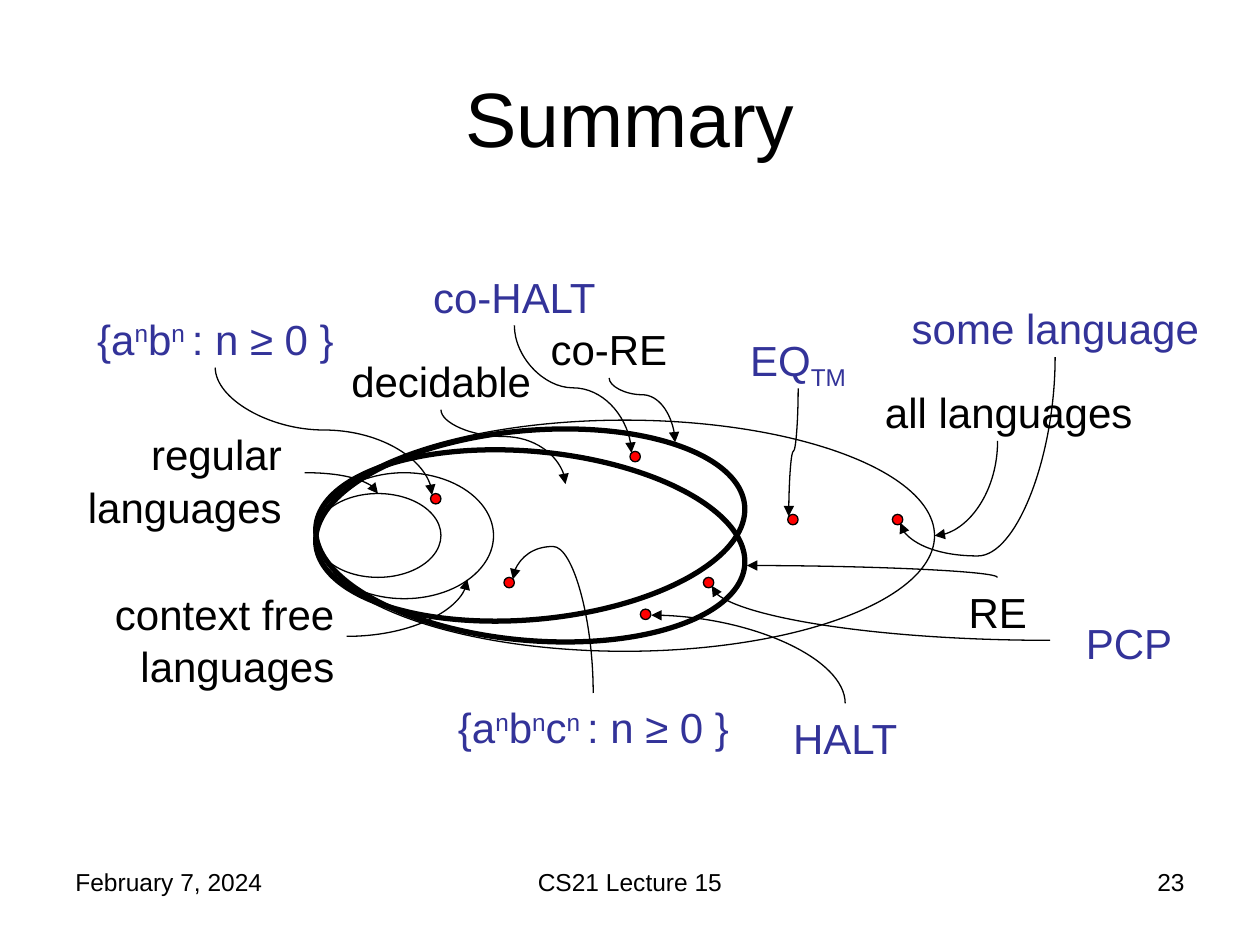
from pptx import Presentation
from pptx import util as u
from pptx.dml import color
from pptx.enum import shapes, text
from pptx.oxml.ns import qn
from lxml import etree

BLACK, BLUE, RED = "000000", "333399", "FF0000"
LEFT, CENTER, RIGHT = text.PP_ALIGN.LEFT, text.PP_ALIGN.CENTER, text.PP_ALIGN.RIGHT
DOT_SIZE = 0.21

CLASSES = [
    (6.35, 8.47, 12.49, 4.66, 0, 0.75),
    (6.35, 9.53, 3.6, 2.54, 0, 0.75),
    (6.35, 9.95, 2.54, 1.69, 0, 0.75),
    (6.35, 9.1, 8.68, 3.81, 5.2, 3),
    (6.35, 8.68, 8.68, 3.81, 354.8, 3),
]
CLASS_LABELS = [
    ("regular languages", (1.27, 8.47, 4.66, 2.29), RIGHT),
    ("context free languages", (1.06, 11.68, 5.93, 2.29), RIGHT),
    ("all languages", (17.15, 7.62, 5.93, 1.27), RIGHT),
    ("decidable", (5.93, 6.99, 5.93, 1.27), CENTER),
    ("RE", (17.15, 11.64, 5.93, 1.27), CENTER),
    ("co-RE", (9.31, 6.35, 5.93, 1.27), CENTER),
]
ANBN = [("{a", 0), ("n", 30), ("b", 0), ("n ", 30), (": n ≥ 0 }", 0)]
ANBNCN = ANBN[:3] + [("n", 30), ("c", 0)] + ANBN[3:]
LANGUAGE_LABELS = [
    (ANBN, (0.64, 6.14, 7.41, 1.27)),
    (ANBNCN, (8.26, 13.97, 7.41, 1.27)),
    ("some language", (17.57, 5.93, 7.41, 1.27)),
    ("HALT", (15.45, 14.18, 3.18, 1.27)),
    ("co-HALT", (7.83, 5.29, 5.08, 1.27)),
    ("PCP", (21.17, 12.28, 3.18, 1.27)),
    ([("EQ", 0), ("TM", -25)], (13.55, 6.56, 5.08, 1.27)),
]
LANGUAGE_DOTS = [
    (8.68, 9.95), (10.16, 11.64), (17.99, 10.37), (12.91, 12.28),
    (12.7, 9.1), (14.18, 11.64), (15.88, 10.37),
]
SIDEWAYS_ARROWS = [
    ((6.14, 9.53), (7.62, 9.95)),
    ((6.99, 12.83), (9.42, 11.68)),
    ((21.17, 12.91), (14.35, 11.81)),
]
UPRIGHT_ARROWS = [
    ((20.11, 8.89), (18.84, 10.8), None),
    ((20.11, 11.64), (15.06, 11.4), None),
    ((17.04, 14.18), (13.13, 12.4), None),
    ((8.89, 8.26), (11.4, 9.76), 0.36),
    ((4.34, 7.41), (8.71, 9.98), 0.49),
    ((11.96, 13.97), (10.34, 11.68), 1.29),
    ((21.27, 7.2), (18.15, 10.54), 1.2),
    ((12.28, 7.62), (13.61, 8.92), 0.26),
    ((10.37, 6.56), (12.73, 9.13), 0.49),
    ((16.09, 7.83), (15.9, 10.41), 0.49),
]
FOOTERS = [
    ("February 7, 2024", (1.27, 17.36, 5.93, 1.31), LEFT),
    ("CS21 Lecture 15", (8.68, 17.36, 8.04, 1.31), CENTER),
    ("23", (18.2, 17.36, 5.93, 1.31), RIGHT),
]


def rgb(value):
    return color.RGBColor.from_string(value)


def lengths(values):
    return [u.Cm(value) for value in values]


def write_text(shape, content, size=24, colour=BLACK, align=CENTER, spacing=None):
    frame = shape.text_frame
    frame.word_wrap = True
    paragraph = frame.paragraphs[0]
    paragraph.alignment = align
    paragraph.line_spacing = spacing
    parts = [(content, 0)] if isinstance(content, str) else content
    for words, baseline in parts:
        run = paragraph.add_run()
        run.text = words
        run.font.name = "Arial"
        run.font.size = u.Pt(size)
        run.font.color.rgb = rgb(colour)
        if baseline:
            run.font._element.set("baseline", str(baseline * 1000))


def add_label(slide, content, box, **style):
    write_text(slide.shapes.add_textbox(*lengths(box)), content, **style)


def add_ellipse(slide, box, fill=None, rotation=0, width=0.75):
    shape = slide.shapes.add_shape(shapes.MSO_SHAPE.OVAL, *lengths(box))
    shape.shadow.inherit = False
    shape.rotation = rotation
    if fill:
        shape.fill.solid()
        shape.fill.fore_color.rgb = rgb(fill)
    else:
        shape.fill.background()
    shape.line.color.rgb = rgb(BLACK)
    shape.line.width = u.Pt(width)


def add_arrow(slide, start, end, upright=False, bend=None):
    rotation = 0
    if upright:
        across, down = end[0] - start[0], end[1] - start[1]
        middle_x, middle_y = (start[0] + end[0]) / 2, (start[1] + end[1]) / 2
        rotation = 270 if across > 0 else 90
        reach = abs(down) / 2 * (-1 if across > 0 or down < 0 else 1)
        rise = abs(across) / 2
        start = (middle_x - reach, middle_y - rise)
        end = (middle_x + reach, middle_y + rise)
    connector = slide.shapes.add_connector(
        shapes.MSO_CONNECTOR.CURVE, *lengths(start + end))
    connector.line.color.rgb = rgb(BLACK)
    connector.line.width = u.Pt(0.75)
    properties = connector._element.spPr
    if rotation:
        properties.find(qn("a:xfrm")).set("rot", str(rotation * 60000))
    geometry = properties.find(qn("a:prstGeom"))
    if bend is None:
        geometry.set("prst", "curvedConnector2")
    else:
        guides = geometry.find(qn("a:avLst"))
        etree.SubElement(guides, qn("a:gd"), name="adj1",
                         fmla=f"val {round(bend * 100000)}")
    etree.SubElement(properties.find(qn("a:ln")), qn("a:tailEnd"), type="triangle")
    etree.SubElement(properties, qn("a:effectLst"))


def add_title(slide, content):
    title = slide.shapes.title
    title.left, title.top, title.width, title.height = lengths((1.27, 0.76, 22.86, 3.18))
    title.text_frame.vertical_anchor = text.MSO_ANCHOR.MIDDLE
    write_text(title, content, size=44)


def main():
    presentation = Presentation()
    presentation.slide_width, presentation.slide_height = lengths((25.4, 19.05))
    slide = presentation.slides.add_slide(presentation.slide_layouts[5])
    add_title(slide, "Summary")
    for *box, rotation, width in CLASSES:
        add_ellipse(slide, box, rotation=rotation, width=width)
    for content, box, align in CLASS_LABELS:
        add_label(slide, content, box, align=align, spacing=1.05)
    for content, box in LANGUAGE_LABELS:
        add_label(slide, content, box, colour=BLUE, spacing=1.05)
    for position in LANGUAGE_DOTS:
        add_ellipse(slide, position + (DOT_SIZE, DOT_SIZE), fill=RED)
    for start, end in SIDEWAYS_ARROWS:
        add_arrow(slide, start, end)
    for start, end, bend in UPRIGHT_ARROWS:
        add_arrow(slide, start, end, upright=True, bend=bend)
    for content, box, align in FOOTERS:
        add_label(slide, content, box, size=14, align=align)
    presentation.save("out.pptx")


if __name__ == "__main__":
    main()
